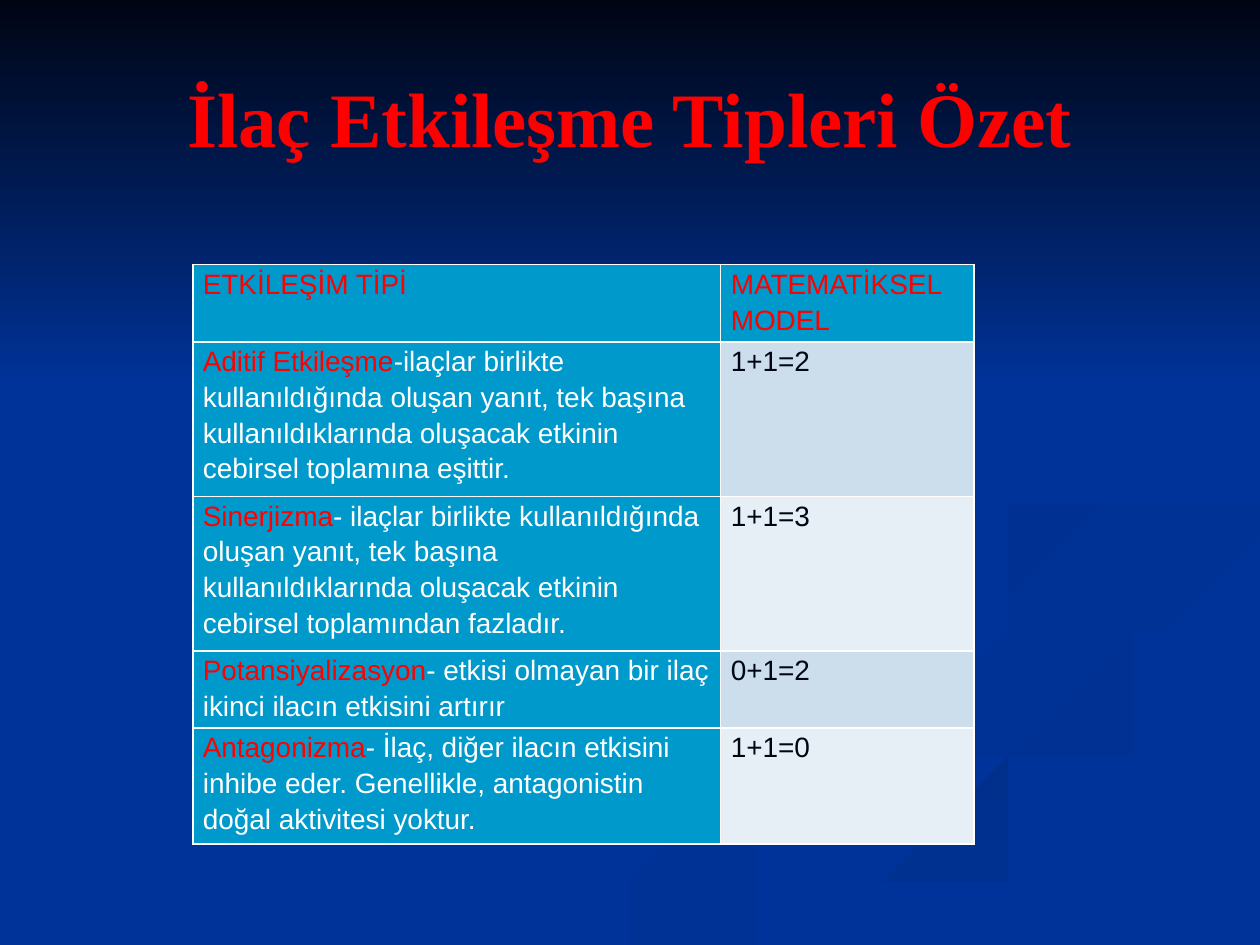
from lxml import etree
from pptx import Presentation
from pptx import util as u
from pptx.dml.color import RGBColor
from pptx.enum import shapes, text
from pptx.oxml.ns import qn

W, H = u.Inches(10), u.Inches(7.5)
STEPS = 6
C = {
    "back": "003399", "night": "000514", "red": "FF0000", "white": "FFFFFF",
    "teal": "0099CC", "band": "CCDEEC", "pale": "E7EFF6",
    "trail": "003193", "road": "002F8C", "hook": "003091", "swirl": "002F8E",
}

LINES_PER_ROW = [2, 4, 4, 2, 3]
HEADERS = ["ETKİLEŞİM TİPİ", "MATEMATİKSEL MODEL"]
TYPES = [
    ("Aditif Etkileşme", "-ilaçlar birlikte kullanıldığında oluşan yanıt, tek başına "
     "kullanıldıklarında oluşacak etkinin cebirsel toplamına eşittir.", "1+1=2"),
    ("Sinerjizma", "- ilaçlar birlikte kullanıldığında oluşan yanıt, tek başına "
     "kullanıldıklarında oluşacak etkinin cebirsel toplamından fazladır.", "1+1=3"),
    ("Potansiyalizasyon", "- etkisi olmayan bir ilaç ikinci ilacın etkisini artırır", "0+1=2"),
    ("Antagonizma", "- İlaç, diğer ilacın etkisini inhibe eder. Genellikle, "
     "antagonistin doğal aktivitesi yoktur.", "1+1=0"),
]

TRAIL_OUTER = [(5.75, 4.6), (5.87, 4.8), (6.8, 5.2), (7.8, 5.53), (8, 5.8),
               (7.7, 6.1), (6.2, 6.47), (5, 6.87), (3.6, 7.5)]
TRAIL_INNER = [(3, 7.5), (4.2, 6.9), (5.8, 6.4), (7.4, 5.98), (7.86, 5.66),
               (7.4, 5.4), (6.3, 5.05), (5.72, 4.76), (5.75, 4.6)]
CRESCENT_OUTER = [(7.25, 4.65), (7.45, 4.9), (8.3, 5.2), (9.2, 5.47), (9.43, 5.7),
                  (9.3, 5.9), (8.95, 6.05)]
CRESCENT_INNER = [(8.95, 6.05), (9.18, 5.8), (9, 5.57), (8.15, 5.3), (7.4, 4.95), (7.25, 4.65)]
ROAD_TOP = [(5, 7.5), (6.3, 6.93), (7.65, 6.47), (9.2, 6.06), (10, 5.8)]
ROAD_BOTTOM = [(10, 6.1), (8.6, 6.4), (7.5, 6.72), (6.5, 7.1), (5.7, 7.5)]
VEIL_TOP = [(10, 3.87), (8.75, 4.08), (7.55, 4.32), (7.25, 4.65)]
VEIL_LEFT = [(8.95, 6.05), (8.1, 6.25), (6.6, 6.7), (4.77, 7.5)]
VEIL_RIGHT = [(10, 5.38), (9.05, 5.2), (8.17, 4.92), (7.8, 4.6), (8.65, 4.24), (10, 4)]
HOOK_OUTER = [(10, 4), (9, 4.18), (8.1, 4.37), (7.8, 4.6), (7.9, 4.78), (8.26, 4.96)]
HOOK_INNER = [(8.26, 4.96), (8.05, 4.74), (8.28, 4.53), (8.95, 4.35), (10, 4.2)]
SWIRL_OUTER = [(7.6, 2.33), (8.43, 2.75), (8.9, 3.25), (8.83, 3.7), (8.25, 4),
               (6.8, 4.3), (6.15, 4.48), (5.93, 4.7), (6.2, 5)]
SWIRL_INNER = [(6.2, 5), (5.8, 4.75), (5.84, 4.46), (6.5, 4.2), (7.9, 3.92),
               (8.7, 3.65), (8.88, 3.3), (8.45, 2.8), (7.6, 2.33)]

RIBBONS = [
    ([TRAIL_OUTER, TRAIL_INNER], ("back", "trail"), 0),
    ([CRESCENT_OUTER, CRESCENT_INNER], ("back", "trail"), 45),
    ([ROAD_TOP, ROAD_BOTTOM], ("road", "back"), 90),
    ([VEIL_TOP, CRESCENT_OUTER, VEIL_LEFT, ROAD_TOP, VEIL_RIGHT], ("back", "back"), 0),
    ([HOOK_OUTER, HOOK_INNER], ("hook", "back"), 45),
    ([SWIRL_OUTER, SWIRL_INNER], ("swirl", "back"), 45),
]


def rgb(name):
    return RGBColor.from_string(C[name])


def spline(a, b, c, d, t):
    return b + t / 2 * (c - a + t * (2 * a - 5 * b + 4 * c - d + t * (3 * (b - c) + d - a)))


def smooth(knots):
    padded = [knots[0], *knots, knots[-1]]
    curve = []
    for quad in zip(padded, padded[1:], padded[2:], padded[3:]):
        for step in range(STEPS):
            curve.append(tuple(spline(*axis, step / STEPS) for axis in zip(*quad)))
    return curve + [knots[-1]]


def paint(sp, colors, angle):
    sp.shadow.inherit = False
    sp.line.fill.background()
    sp.fill.gradient()
    sp.fill.gradient_angle = (360 - angle) % 360
    for position, (stop, name) in enumerate(zip(sp.fill.gradient_stops, colors)):
        stop.color.rgb = rgb(name)
        stop.position = position


def add_ribbon(slide, edges, colors, angle):
    outline = [point for edge in edges for point in smooth(edge)]
    fb = slide.shapes.build_freeform(*outline[0], scale=u.Inches(1))
    fb.add_line_segments(outline[1:], close=True)
    paint(fb.convert_to_shape(), colors, angle)


def add_night_sky(slide):
    sp = slide.shapes.add_shape(shapes.MSO_SHAPE.RECTANGLE, 0, 0, W, int(H * 0.41))
    paint(sp, ("night", "back"), 90)


def add_title(slide, title):
    sp = slide.shapes.add_textbox(int(W * 0.05), int(H * 0.04), int(W * 0.9), int(H / 6))
    tf = sp.text_frame
    tf.word_wrap = True
    tf.vertical_anchor = text.MSO_ANCHOR.MIDDLE
    p = tf.paragraphs[0]
    p.text = title
    p.alignment = text.PP_ALIGN.CENTER
    p.font.name, p.font.size, p.font.bold = "Times New Roman", u.Pt(44), True
    p.font.color.rgb = rgb("red")


def set_borders(cell):
    tcPr = cell._tc.get_or_add_tcPr()
    for side in ("lnL", "lnR", "lnT", "lnB"):
        ln = etree.SubElement(tcPr, qn(f"a:{side}"), w=str(u.Pt(1)))
        fill = etree.SubElement(ln, qn("a:solidFill"))
        etree.SubElement(fill, qn("a:srgbClr"), val=C["white"])


def fill_cell(cell, fill, *runs):
    set_borders(cell)
    cell.fill.solid()
    cell.fill.fore_color.rgb = rgb(fill)
    cell.margin_left = cell.margin_right = u.Inches(0.08)
    cell.margin_top = cell.margin_bottom = 0
    p = cell.text_frame.paragraphs[0]
    p.line_spacing, p.space_after = 1.15, u.Pt(10)
    p.font.name, p.font.size, p.font.bold = "Arial", u.Pt(16), False
    for words, color in runs:
        r = p.add_run()
        r.text = words
        r.font.color.rgb = rgb(color)


def add_types_table(slide):
    width, height = int(W * 0.62), u.Inches(4.6)
    frame = slide.shapes.add_table(len(TYPES) + 1, len(HEADERS),
                                   int(W * 0.153), int(H * 0.28), width, height)
    table = frame.table
    table.columns[0].width = u.Inches(4.19)
    table.columns[1].width = width - table.columns[0].width
    for row, lines in zip(table.rows, LINES_PER_ROW):
        row.height = int(height * lines / sum(LINES_PER_ROW))
    for col, header in enumerate(HEADERS):
        fill_cell(table.cell(0, col), "teal", (header, "red"))
    for row, (name, meaning, model) in enumerate(TYPES, 1):
        fill_cell(table.cell(row, 0), "teal", (name, "red"), (meaning, "white"))
        fill_cell(table.cell(row, 1), "band" if row % 2 else "pale", (model, "night"))


def main():
    prs = Presentation()
    prs.slide_width, prs.slide_height = W, H
    slide = prs.slides.add_slide(prs.slide_layouts[6])
    slide.background.fill.solid()
    slide.background.fill.fore_color.rgb = rgb("back")
    for edges, colors, angle in RIBBONS:
        add_ribbon(slide, edges, colors, angle)
    add_night_sky(slide)
    add_title(slide, "İlaç Etkileşme Tipleri Özet")
    add_types_table(slide)
    prs.save("out.pptx")


if __name__ == "__main__":
    main()
